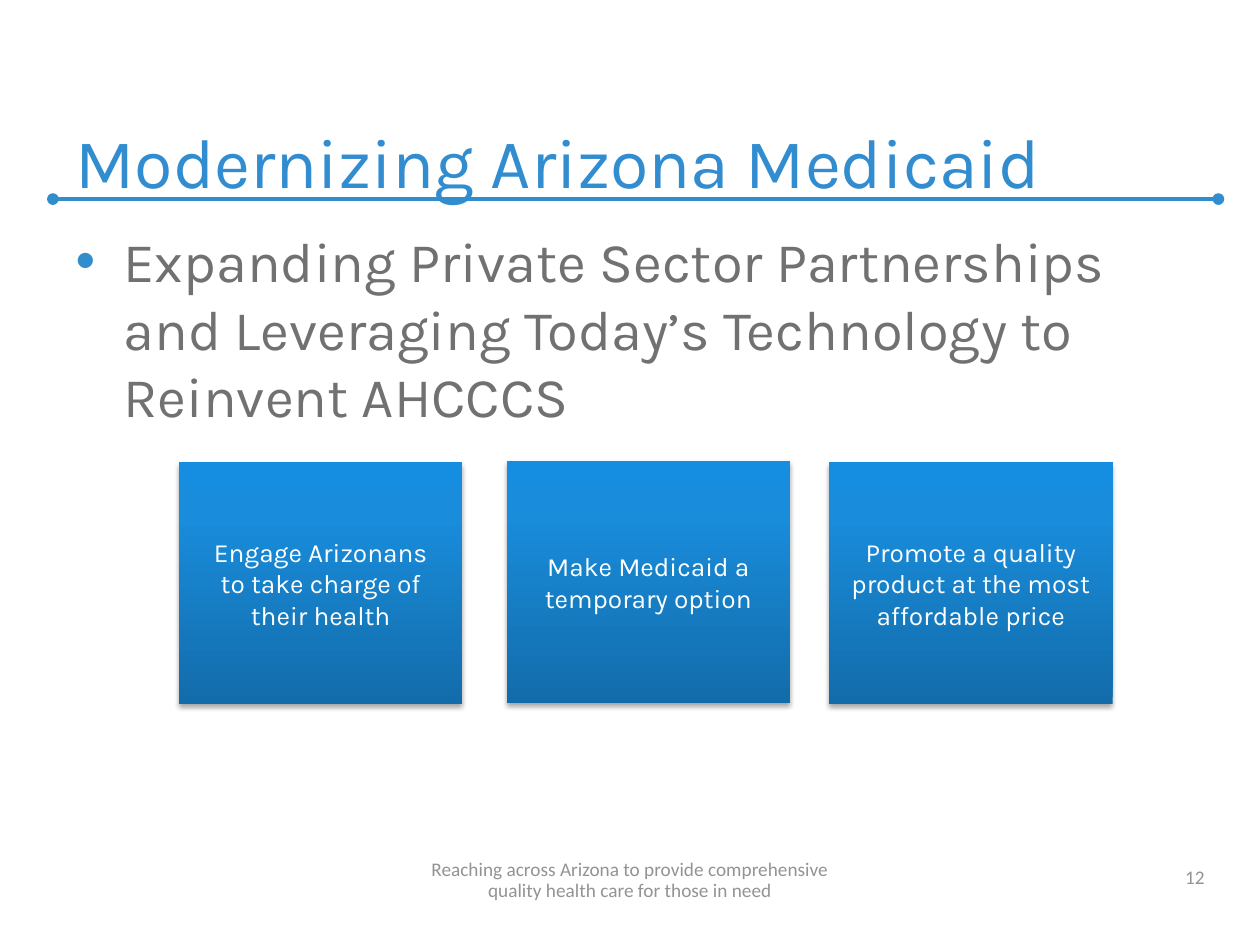
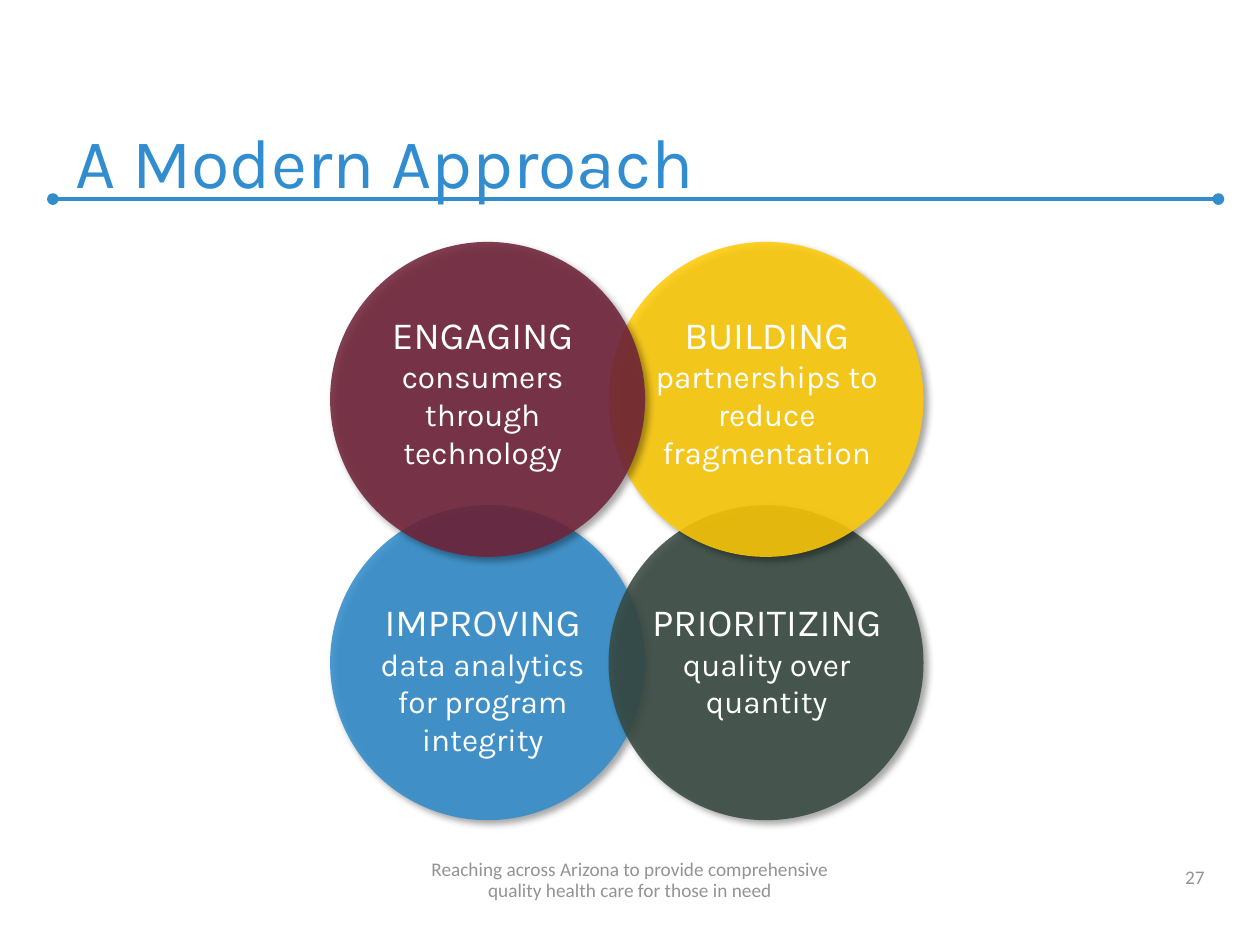
from copy import deepcopy
from lxml.etree import SubElement
from pptx import Presentation
from pptx.dml.color import RGBColor
from pptx.enum.shapes import MSO_CONNECTOR, MSO_SHAPE
from pptx.enum.text import MSO_ANCHOR, MSO_AUTO_SIZE, PP_ALIGN
from pptx.oxml.ns import qn
from pptx.util import Inches, Pt

HEADING_FONT = "Karla"
FOOTER_FONT = "Calibri"
RULE_BLUE = "318DCC"
TITLE_BLUE = "318DCF"
BODY_GREY = "717171"
FOOTER_GREY = "939393"
WHITE = "FFFFFF"

MOTTO = "Reaching across Arizona to provide comprehensive\nquality health care for those in need"

MODERNIZING = {
    "title": "Modernizing Arizona Medicaid",
    "number": "12",
    "bullet": "Expanding Private Sector Partnerships and Leveraging Today’s Technology to Reinvent AHCCCS",
    "goals": [
        (1.42, 3.67, "Engage Arizonans\nto take charge of their health"),
        (4.02, 3.66, "Make Medicaid a temporary option"),
        (6.58, 3.67, "Promote a quality product at the most affordable price"),
    ],
}
GOAL_SIZE = (2.25, 1.92)
GOAL_STOPS = [(0, "136CAA"), (0.8, "198DDC"), (1, "158EE1")]
GOAL_SHADOW = {"opacity": 35, "blur": 3.1, "distance": 1.8, "angle": 90}

APPROACH = {
    "title": "A Modern Approach",
    "number": "27",
    "circles": [
        ("left", "bottom", RULE_BLUE, "IMPROVING", "data analytics for program integrity"),
        ("right", "bottom", "374941", "PRIORITIZING", "quality over quantity"),
        ("right", "top", "FFCB08", "BUILDING", "partnerships to reduce fragmentation"),
        ("left", "top", "702339", "ENGAGING", "consumers through technology"),
    ],
}
DIAMETER = 2.5
CIRCLE_OPACITY = 87
CIRCLE_SHADOW = {"opacity": 40, "blur": 4, "distance": 3, "angle": 45}
COLUMNS = {"left": (2.62, 2.79, 2.08), "right": (4.83, 4.96, 2.25)}
ROWS = {"top": (1.92, 2.42, 1.68), "bottom": (4.01, 4.7, 1.4)}


def color(hex_value):
    return RGBColor.from_string(hex_value)


def assign(target, values):
    for key, value in values.items():
        setattr(target, key, value)


def place(shape, left, top, width, height):
    bounds = {"left": left, "top": top, "width": width, "height": height}
    assign(shape, {side: Inches(length) for side, length in bounds.items()})


def style_frame(frame, anchor):
    assign(frame, {"word_wrap": True, "auto_size": MSO_AUTO_SIZE.NONE, "vertical_anchor": anchor})


def write(paragraph, text, size, hex_value, font=HEADING_FONT, align=PP_ALIGN.CENTER):
    paragraph.text = text
    assign(paragraph, {"alignment": align, "space_before": Pt(0)})
    assign(paragraph.font, {"name": font, "size": Pt(size), "bold": False})
    paragraph.font.color.rgb = color(hex_value)


def add_label(slide, bounds, anchor):
    label = slide.shapes.add_textbox(*map(Inches, bounds))
    style_frame(label.text_frame, anchor)
    return label.text_frame


def cast_shadow(shape, opacity, blur, distance, angle):
    shape.shadow.inherit = False
    effects = shape._element.spPr.find(qn("a:effectLst"))
    shadow = SubElement(effects, qn("a:outerShdw"), blurRad=str(Pt(blur)),
                        dist=str(Pt(distance)), dir=str(angle * 60000), rotWithShape="0")
    black = SubElement(shadow, qn("a:srgbClr"), val="000000")
    SubElement(black, qn("a:alpha"), val=str(opacity * 1000))


def add_title_rule(slide):
    rule = slide.shapes.add_connector(MSO_CONNECTOR.STRAIGHT, Inches(0.42), Inches(1.58),
                                      Inches(9.67), Inches(1.58))
    rule.line.width = Pt(2.25)
    rule.line.color.rgb = color(RULE_BLUE)
    outline = rule.line._get_or_add_ln()
    for end in ("a:headEnd", "a:tailEnd"):
        SubElement(outline, qn(end), type="oval")
    SubElement(rule._element.spPr, qn("a:effectLst"))


def add_framed_slide(deck, layout, content):
    slide = deck.slides.add_slide(deck.slide_layouts.get_by_name(layout))
    add_title_rule(slide)
    title = slide.shapes.title
    place(title, 0.5, 0.33, 9.08, 1.33)
    style_frame(title.text_frame, MSO_ANCHOR.BOTTOM)
    write(title.text_frame.paragraphs[0], content["title"], 40, TITLE_BLUE, align=PP_ALIGN.LEFT)

    number = add_label(slide, (7.33, 6.78, 2.33, 0.32), MSO_ANCHOR.BOTTOM)
    write(number.paragraphs[0], content["number"], 11, FOOTER_GREY, FOOTER_FONT, PP_ALIGN.RIGHT)
    motto = add_label(slide, (0, 6.78, 10, 0.42), MSO_ANCHOR.BOTTOM)
    write(motto.paragraphs[0], MOTTO, 11, FOOTER_GREY, FOOTER_FONT)
    motto.paragraphs[0].line_spacing = Pt(12)
    return slide


def add_bullet(slide, text):
    body = slide.placeholders[1]
    place(body, 0.5, 1.75, 9.17, 4.78)
    style_frame(body.text_frame, MSO_ANCHOR.TOP)
    paragraph = body.text_frame.paragraphs[0]
    properties = paragraph._p.get_or_add_pPr()
    properties.set("marL", str(Inches(0.38)))
    properties.set("indent", str(-Inches(0.38)))
    SubElement(SubElement(properties, qn("a:buClr")), qn("a:srgbClr"), val=RULE_BLUE)
    SubElement(properties, qn("a:buFont"), typeface="Arial")
    SubElement(properties, qn("a:buChar"), char="•")
    write(paragraph, text, 32, BODY_GREY, align=PP_ALIGN.LEFT)


def add_goal(slide, left, top, text):
    goal = slide.shapes.add_shape(MSO_SHAPE.RECTANGLE, *map(Inches, (left, top, *GOAL_SIZE)))
    goal.fill.gradient()
    goal.fill.gradient_angle = 90
    stop_list = goal._element.spPr.find(qn("a:gradFill")).find(qn("a:gsLst"))
    stop_list.append(deepcopy(stop_list[-1]))
    for stop, (position, hex_value) in zip(goal.fill.gradient_stops, GOAL_STOPS):
        stop.position = position
        stop.color.rgb = color(hex_value)
    goal.line.fill.background()
    cast_shadow(goal, **GOAL_SHADOW)
    style_frame(goal.text_frame, MSO_ANCHOR.MIDDLE)
    write(goal.text_frame.paragraphs[0], text, 15, WHITE)


def add_circle(slide, column, row, hex_value, action, detail):
    left, label_left, label_width = COLUMNS[column]
    top, label_top, label_height = ROWS[row]
    circle = slide.shapes.add_shape(MSO_SHAPE.OVAL, *map(Inches, (left, top, DIAMETER, DIAMETER)))
    circle.fill.solid()
    circle.fill.fore_color.rgb = color(hex_value)
    tint = circle._element.spPr.find(qn("a:solidFill"))[0]
    SubElement(tint, qn("a:alpha"), val=str(CIRCLE_OPACITY * 1000))
    circle.line.fill.background()
    cast_shadow(circle, **CIRCLE_SHADOW)
    label = add_label(slide, (label_left, label_top, label_width, label_height), MSO_ANCHOR.TOP)
    write(label.paragraphs[0], action, 22, WHITE)
    write(label.add_paragraph(), detail, 18, WHITE)


def main():
    deck = Presentation()
    assign(deck, {"slide_width": Inches(10), "slide_height": Inches(7.5)})

    modernizing = add_framed_slide(deck, "Title and Content", MODERNIZING)
    add_bullet(modernizing, MODERNIZING["bullet"])
    for goal in MODERNIZING["goals"]:
        add_goal(modernizing, *goal)

    approach = add_framed_slide(deck, "Title Only", APPROACH)
    for circle in APPROACH["circles"]:
        add_circle(approach, *circle)

    deck.save("out.pptx")


if __name__ == "__main__":
    main()
